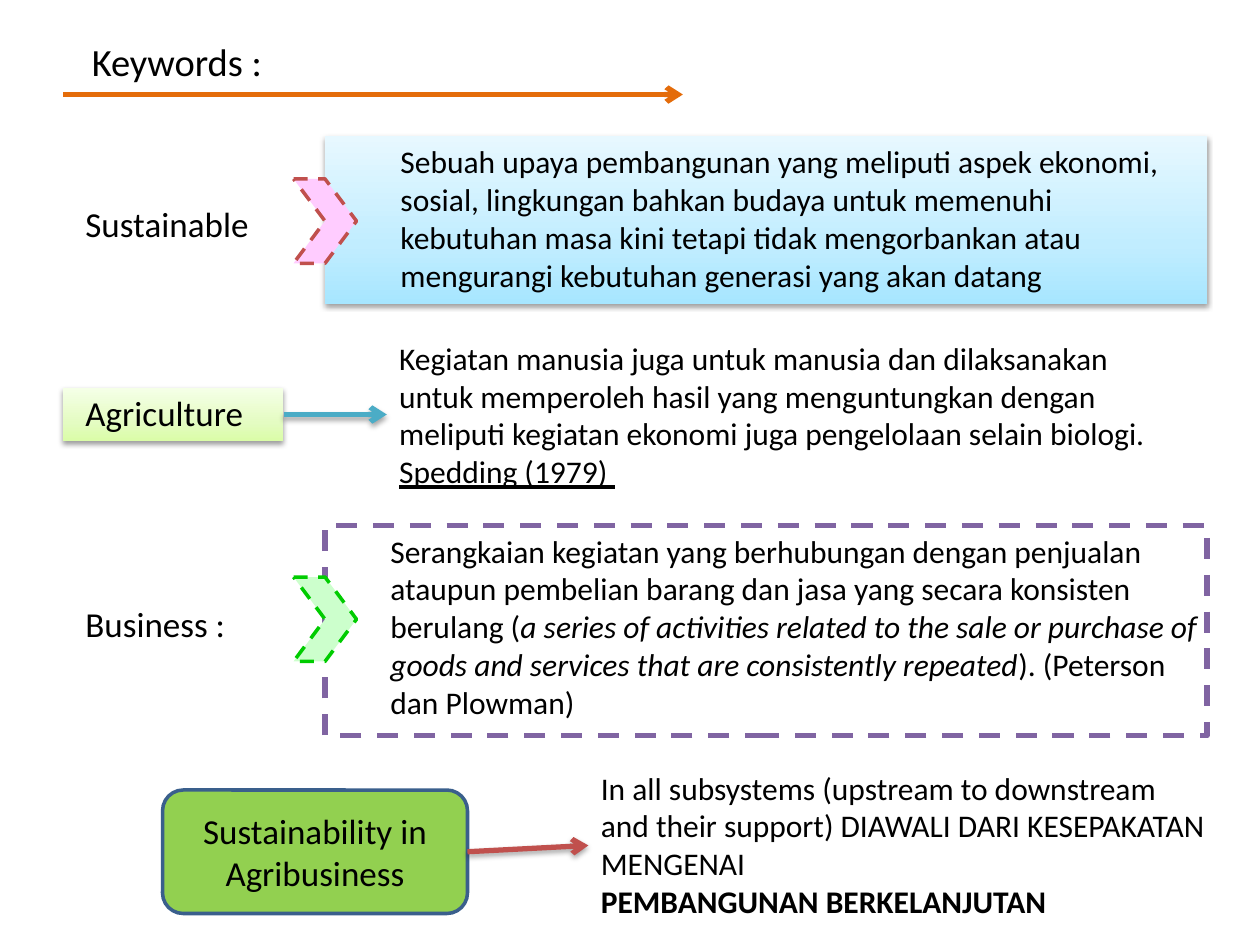
from dataclasses import dataclass

from lxml import etree
from pptx import Presentation
from pptx import util as u
from pptx.dml.color import RGBColor
from pptx.enum import dml, shapes, text
from pptx.oxml import ns


@dataclass(frozen=True)
class Theme:
    """Colours, font and type sizes of the slide."""
    font: str = "Calibri"
    title: int = 22
    term: int = 20
    body: int = 18
    ink: str = "000000"
    white: str = "FFFFFF"
    green: str = "92D050"
    navy: str = "3A5F8C"
    purple: str = "8064A2"
    orange: str = "E46C0A"
    red: str = "C0504D"
    teal: str = "4BACC6"
    pink: str = "FFCCFF"
    mint: str = "CCFFCC"
    lime: str = "00CC00"
    sky_blend: tuple = ((0, "A7E6FF"), (35, "C1EDFF"), (100, "E7F8FF"))
    lime_blend: tuple = ((0, "DAFDA7"), (35, "E4FCC2"), (100, "F5FFE7"))


THEME = Theme()
DASH = dml.MSO_LINE.DASH


def inches(box):
    """Turn a box of numbers into lengths."""
    return [u.Inches(value) for value in box]


def add_node(parent, tag, **attributes):
    """Append a drawing element with attributes."""
    node = etree.SubElement(parent, ns.qn(tag))
    for name, value in attributes.items():
        node.set(name, str(value))
    return node


def set_effects(part, opacity=None, distance=0):
    """Give a part a soft downward shadow, or none."""
    part_format = part._element.spPr
    for previous in part_format.findall(ns.qn("a:effectLst")):
        part_format.remove(previous)
    effects = add_node(part_format, "a:effectLst")
    if opacity:
        shadow = add_node(effects, "a:outerShdw", blurRad=u.Pt(3.1), dist=u.Pt(distance),
                          dir=5400000, rotWithShape=0)
        ink = add_node(shadow, "a:srgbClr", val=THEME.ink)
        add_node(ink, "a:alpha", val=opacity * 1000)


def set_line(line, color, width, dash=None):
    """Set the colour, width and dash of a line."""
    line.color.rgb = RGBColor.from_string(color)
    for name, value in {"width": u.Pt(width), "dash_style": dash}.items():
        setattr(line, name, value)


def write(frame, paragraphs, size, **frame_format):
    """Write paragraphs of (wording, font format) runs."""
    settings = {"word_wrap": True, "auto_size": text.MSO_AUTO_SIZE.SHAPE_TO_FIT_TEXT, **frame_format}
    for name, value in settings.items():
        setattr(frame, name, value)
    for index, runs in enumerate(paragraphs):
        paragraph = frame.add_paragraph() if index else frame.paragraphs[0]
        for wording, style in runs:
            run = paragraph.add_run()
            run.text = wording
            run.font.color.rgb = RGBColor.from_string(THEME.ink)
            for name, value in {"name": THEME.font, "size": u.Pt(size), **style}.items():
                setattr(run.font, name, value)


def add_label(slide, box, paragraphs, size, **frame_format):
    """Place a text box."""
    label = slide.shapes.add_textbox(*inches(box))
    write(label.text_frame, paragraphs, size, **frame_format)


def add_panel(slide, kind, box, fill, line=None):
    """Place a flat panel with an optional outline."""
    panel = slide.shapes.add_shape(kind, *inches(box))
    panel.fill.solid()
    panel.fill.fore_color.rgb = RGBColor.from_string(fill)
    if line:
        set_line(panel.line, *line)
    else:
        panel.line.fill.background()
    set_effects(panel)
    return panel


def add_blend(slide, box, blend):
    """Place a shadowed rectangle that fades upward."""
    panel = slide.shapes.add_shape(shapes.MSO_SHAPE.RECTANGLE, *inches(box))
    panel.fill.gradient()
    panel.fill.gradient_angle = 90
    stops = panel._element.spPr.find(".//" + ns.qn("a:gsLst"))
    for stop in list(stops):
        stops.remove(stop)
    for position, color in blend:
        stop = add_node(stops, "a:gs", pos=position * 1000)
        add_node(stop, "a:srgbClr", val=color)
    panel.line.fill.background()
    set_effects(panel, 38, 1.6)


def add_arrow(slide, start, end, color, **effects):
    """Draw an arrow between two points."""
    arrow = slide.shapes.add_connector(shapes.MSO_CONNECTOR.STRAIGHT, *inches(start + end))
    set_line(arrow.line, color, 3)
    add_node(arrow.line._get_or_add_ln(), "a:tailEnd", type="arrow")
    set_effects(arrow, **effects)


def add_chevron(slide, top, fill, color):
    """Place the dashed chevron that leads into a definition."""
    add_panel(slide, shapes.MSO_SHAPE.CHEVRON, (2.33, top, 0.5, 0.67), fill, (color, 2, DASH))


def heading(slide, left, top):
    """Build the heading and its long arrow."""
    add_label(slide, (left + 0.13, top, 1.71, 0.47), [[("Keywords :", {})]], THEME.title, word_wrap=False)
    add_arrow(slide, (left, top + 0.5), (left + 4.92, top + 0.5), THEME.orange)


def sustainable(slide, left, top, width, height):
    """Build the row that defines sustainable."""
    add_blend(slide, (left, top, width, height), THEME.sky_blend)
    add_label(slide, (0.58, top + 0.48, 1.5, 0.44), [[("Sustainable", {})]], THEME.term)
    add_label(slide, (left + 0.5, top, 6.42, 1.31), [[(
        "Sebuah upaya pembangunan yang meliputi aspek ekonomi, sosial, lingkungan bahkan budaya "
        "untuk memenuhi kebutuhan masa kini tetapi tidak mengorbankan atau mengurangi kebutuhan "
        "generasi yang akan datang", {})]], THEME.body)
    add_chevron(slide, top + 0.34, THEME.pink, THEME.red)


def agriculture(slide, left, top, width, height):
    """Build the row that defines agriculture."""
    add_blend(slide, (left, top, width, height), THEME.lime_blend)
    add_label(slide, (left + 0.08, top - 0.02, 1.58, 0.44), [[("Agriculture", {})]], THEME.term)
    add_label(slide, (3.07, top - 0.44, 6.33, 1.31), [[
        ("Kegiatan manusia juga untuk manusia dan dilaksanakan untuk memperoleh hasil yang "
         "menguntungkan dengan meliputi kegiatan ekonomi juga pengelolaan selain biologi. ", {}),
        ("Spedding (1979) ", {"underline": True})]], THEME.body)
    middle = top + height / 2
    add_arrow(slide, (left + width, middle), (3.07, middle), THEME.teal, opacity=35, distance=1.8)


def business(slide, left, top, width, height):
    """Build the row that defines business."""
    add_panel(slide, shapes.MSO_SHAPE.RECTANGLE, (left, top, width, height), THEME.white,
              (THEME.purple, 3, DASH))
    add_label(slide, (0.58, top + 0.56, 1.46, 0.44), [[("Business :", {})]], THEME.term)
    add_label(slide, (left + 0.42, top, 6.67, 1.62), [[
        ("Serangkaian kegiatan yang berhubungan dengan penjualan ataupun pembelian barang dan jasa "
         "yang secara konsisten berulang (", {}),
        ("a series of activities related to the sale or purchase of goods and services that are "
         "consistently repeated", {"italic": True}),
        ("). (Peterson dan Plowman)", {})]], THEME.body)
    add_chevron(slide, top + 0.41, THEME.mint, THEME.lime)


def conclusion(slide, left, top, width, height):
    """Build the closing box, its arrow and its statement."""
    box = add_panel(slide, shapes.MSO_SHAPE.ROUNDED_RECTANGLE, (left, top, width, height),
                    THEME.green, (THEME.navy, 2))
    write(box.text_frame, [[("Sustainability in Agribusiness", {})]], THEME.term,
          auto_size=text.MSO_AUTO_SIZE.NONE, vertical_anchor=text.MSO_ANCHOR.MIDDLE)
    box.text_frame.paragraphs[0].alignment = text.PP_ALIGN.CENTER
    add_label(slide, (4.67, top - 0.22, 4.99, 1.31), [
        [("In all subsystems (upstream to downstream and their support) DIAWALI DARI "
          "KESEPAKATAN MENGENAI", {})],
        [("PEMBANGUNAN BERKELANJUTAN", {"bold": True})]], THEME.body)
    middle = top + height / 2
    add_arrow(slide, (left + width, middle), (4.67, middle - 0.05), THEME.red, opacity=35, distance=1.8)


def main():
    """Build and save the slide."""
    deck = Presentation()
    deck.slide_width, deck.slide_height = inches((10, 7.5))
    slide = deck.slides.add_slide(deck.slide_layouts[6])
    heading(slide, 0.5, 0.25)
    sustainable(slide, 2.58, 1.08, 7, 1.33)
    agriculture(slide, 0.5, 3.08, 1.75, 0.42)
    business(slide, 2.58, 4.17, 7, 1.67)
    conclusion(slide, 1.29, 6.27, 2.42, 0.98)
    deck.save("out.pptx")


if __name__ == "__main__":
    main()
